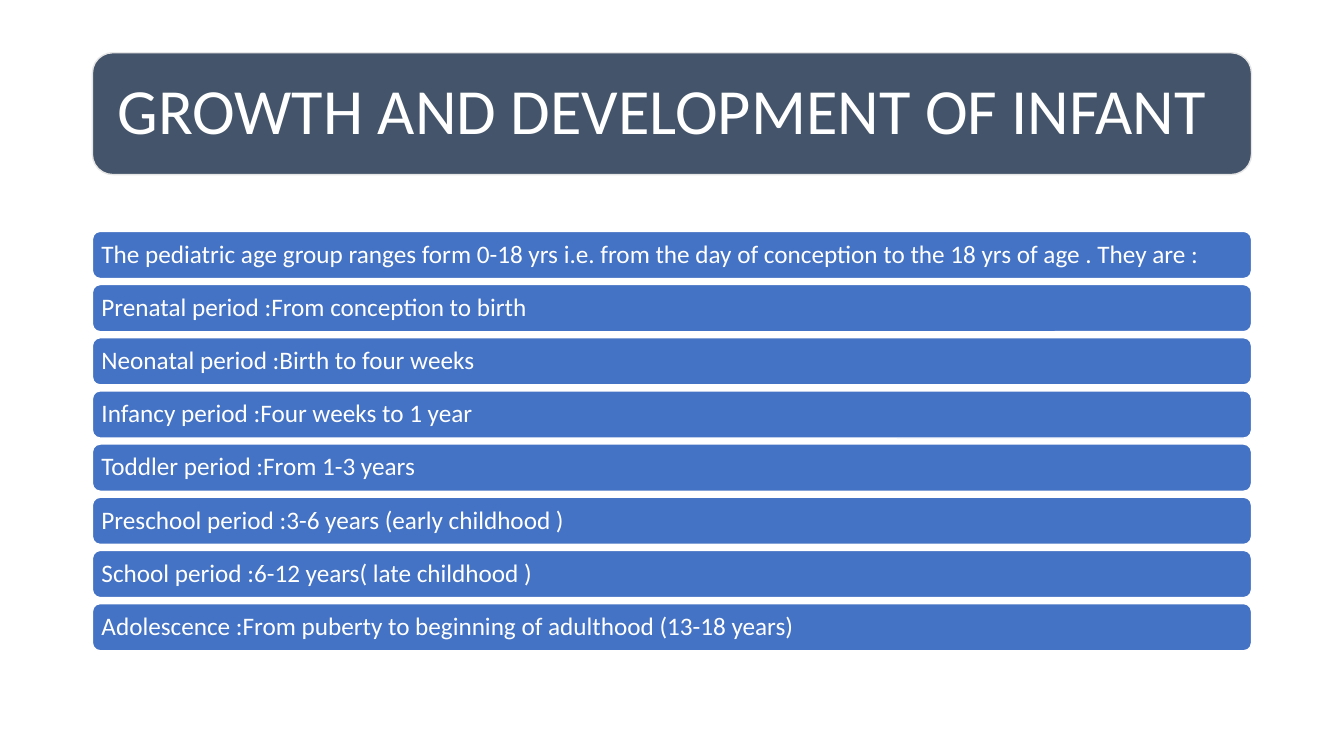
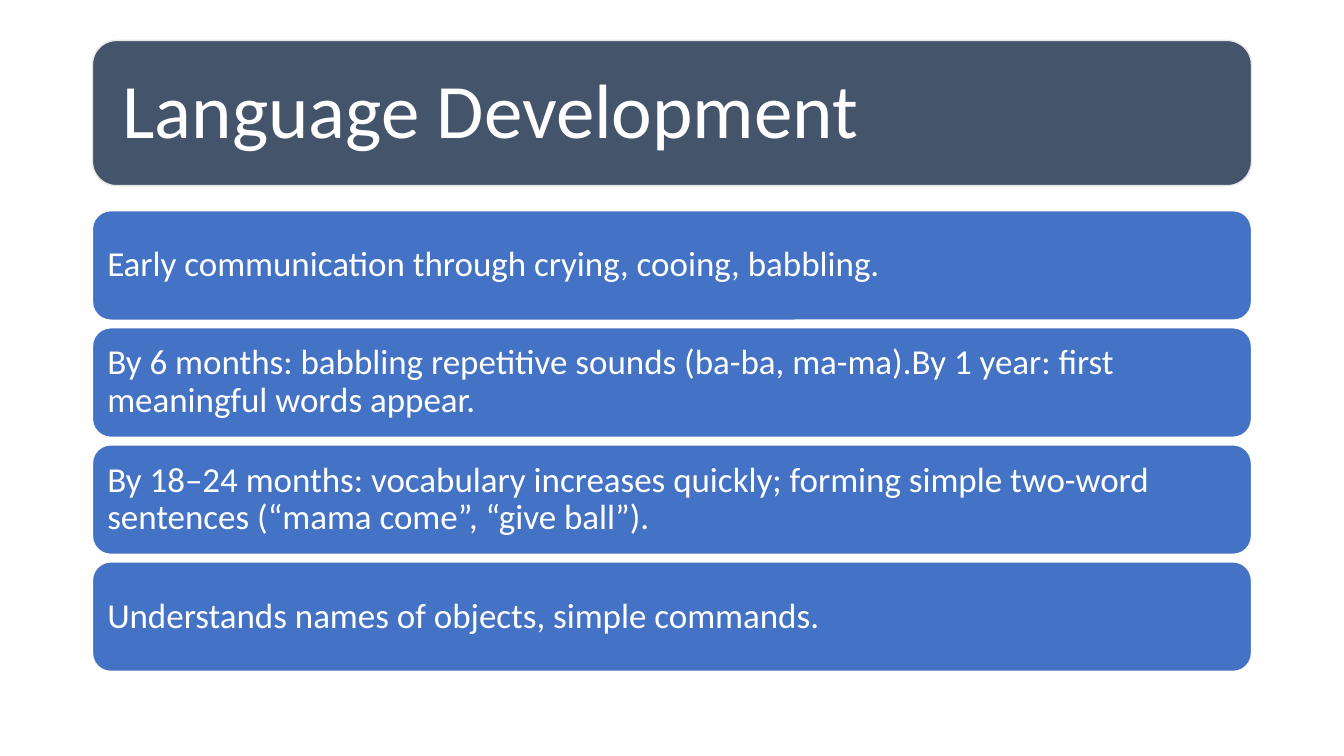
"""Build two slides on infant growth: a banner title over a stack of bars."""
from pptx import Presentation
from pptx.dml.color import RGBColor
from pptx.enum.shapes import MSO_SHAPE
from pptx.enum.text import MSO_ANCHOR, MSO_AUTO_SIZE, PP_ALIGN
from pptx.util import Cm, Pt

NAVY = RGBColor(0x44, 0x54, 0x6A)
BLUE = RGBColor(0x44, 0x72, 0xC4)
GRAY = RGBColor(0xE7, 0xE6, 0xE6)
WHITE = RGBColor(0xFF, 0xFF, 0xFF)
FONT = "Calibri"
LEFT, WIDTH = 2.33, 29.21

SLIDES = [
    {
        "title": "GROWTH AND DEVELOPMENT OF INFANT",
        "banner": {"top": 1.33, "height": 3.07, "size": 46, "inset": 0.64},
        "bars": {"top": 5.83, "height": 1.19, "gap": 0.15, "size": 18, "inset": 0.17},
        "items": [
            "The pediatric age group ranges form 0-18 yrs i.e. from the day of "
            "conception to the 18 yrs of age . They are :",
            "Prenatal period :From conception to birth",
            "Neonatal period :Birth to four weeks",
            "Infancy period :Four weeks to 1 year",
            "Toddler period :From 1-3 years",
            "Preschool period :3-6 years (early childhood )",
            "School period :6-12 years( late childhood )",
            "Adolescence :From puberty to beginning of adulthood (13-18 years)",
        ],
    },
    {
        "title": "Language Development",
        "banner": {"top": 1.02, "height": 3.66, "size": 55, "inset": 0.76},
        "bars": {"top": 5.31, "height": 2.76, "gap": 0.19, "size": 25, "inset": 0.24},
        "items": [
            "Early communication through crying, cooing, babbling.",
            "By 6 months: babbling repetitive sounds (ba-ba, ma-ma)."
            "By 1 year: first meaningful words appear.",
            "By 18–24 months: vocabulary increases quickly; forming simple "
            "two-word sentences (“mama come”, “give ball”).",
            "Understands names of objects, simple commands.",
        ],
    },
]


def add_box(slide, top, height, fill, line):
    box = slide.shapes.add_shape(
        MSO_SHAPE.ROUNDED_RECTANGLE, Cm(LEFT), Cm(top), Cm(WIDTH), Cm(height))
    box.shadow.inherit = False
    box.fill.solid()
    box.fill.fore_color.rgb = fill
    box.line.color.rgb = line
    box.line.width = Pt(1)
    return box


def set_text(shape, text, size, inset):
    frame = shape.text_frame
    frame.text = text
    frame.word_wrap = True
    frame.auto_size = MSO_AUTO_SIZE.NONE
    frame.vertical_anchor = MSO_ANCHOR.MIDDLE
    frame.margin_left = frame.margin_right = Cm(inset)
    frame.margin_top = frame.margin_bottom = Cm(inset)
    para = frame.paragraphs[0]
    para.alignment = PP_ALIGN.LEFT
    para.line_spacing = 0.9
    font = para.runs[0].font
    font.name, font.size, font.color.rgb = FONT, Pt(size), WHITE


def add_title(slide, text, top, height, size, inset):
    banner = add_box(slide, top, height, NAVY, GRAY)
    title = slide.shapes.title
    title.left, title.top = banner.left, banner.top
    title.width, title.height = banner.width, banner.height
    title.element.addprevious(banner.element)
    set_text(title, text, size, inset)


def add_bars(slide, items, top, height, gap, size, inset):
    for row, text in enumerate(items):
        bar = add_box(slide, top + row * (height + gap), height, BLUE, WHITE)
        set_text(bar, text, size, inset)


def main():
    deck = Presentation()
    deck.slide_width, deck.slide_height = Cm(33.87), Cm(19.05)
    for page in SLIDES:
        slide = deck.slides.add_slide(deck.slide_layouts[5])
        add_title(slide, page["title"], **page["banner"])
        add_bars(slide, page["items"], **page["bars"])
    deck.save("out.pptx")


if __name__ == "__main__":
    main()
